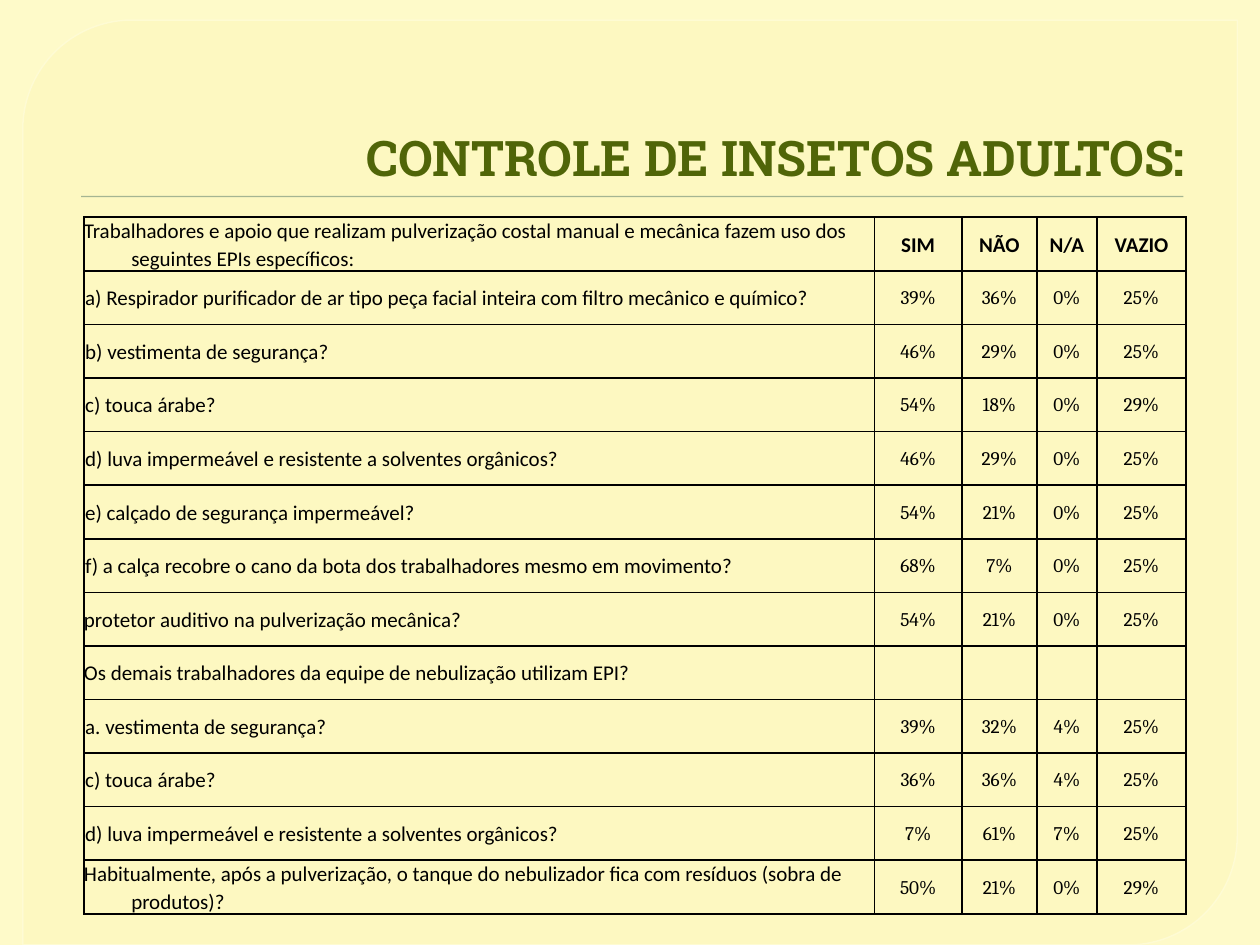
from dataclasses import dataclass

from lxml.etree import SubElement
from pptx import Presentation
from pptx.dml.color import RGBColor as RGB
from pptx.enum.shapes import MSO_SHAPE as Shape
from pptx.enum.text import MSO_ANCHOR as Anchor, PP_ALIGN as Align
from pptx.oxml.ns import qn
from pptx.util import Pt


@dataclass(frozen=True)
class Theme:
    background: str = "FEFAC9"
    panel: str = "FDF8BE"
    panel_line: str = "FFFCD6"
    rule: str = "A5B592"
    title: str = "506508"
    ink: str = "000000"
    title_font: str = "Roboto Slab"
    label_font: str = "Calibri"
    value_font: str = "Cambria"
    title_size: float = 28
    label_size: float = 12
    value_size: float = 11


THEME = Theme()
TITLE = "CONTROLE DE INSETOS ADULTOS:"
COLUMNS = [451.6, 50.2, 42.7, 34.4, 50.9]
ROW_HEIGHT = 30.63
WIDE, NARROW, CENTERED = (27, -27), (18.7, -18), (18, -18)
HEADER = ["SIM", "NÃO", "N/A", "VAZIO"]
ROWS = [
    ("Trabalhadores e apoio que realizam pulverização costal manual e mecânica "
     "fazem uso dos seguintes EPIs específicos:", WIDE, HEADER),
    ("a) Respirador purificador de ar tipo peça facial inteira com filtro "
     "mecânico e químico?", NARROW, [39, 36, 0, 25]),
    ("b) vestimenta de segurança?", NARROW, [46, 29, 0, 25]),
    ("c) touca árabe?", NARROW, [54, 18, 0, 29]),
    ("d) luva impermeável e resistente a solventes orgânicos?", NARROW, [46, 29, 0, 25]),
    ("e) calçado de segurança impermeável?", NARROW, [54, 21, 0, 25]),
    ("f) a calça recobre o cano da bota dos trabalhadores mesmo em movimento?",
     NARROW, [68, 7, 0, 25]),
    ("protetor auditivo na pulverização mecânica?", WIDE, [54, 21, 0, 25]),
    ("Os demais trabalhadores da equipe de nebulização utilizam EPI?", WIDE, []),
    ("a. vestimenta de segurança?", NARROW, [39, 32, 4, 25]),
    ("c) touca árabe?", NARROW, [36, 36, 4, 25]),
    ("d) luva impermeável e resistente a solventes orgânicos?", NARROW, [7, 61, 7, 25]),
    ("Habitualmente, após a pulverização, o tanque do nebulizador fica com "
     "resíduos (sobra de produtos)?", WIDE, [50, 21, 0, 29]),
]


def paint(fill, color, opacity=100):
    fill.solid()
    fill.fore_color.rgb = RGB.from_string(color)
    if opacity < 100:
        for clr in fill._xPr.iter(qn("a:srgbClr")):
            SubElement(clr, qn("a:alpha"), val=str(opacity * 1000))


def add_box(s, kind, left, top, width, height, color, opacity=100):
    sp = s.shapes.add_shape(kind, Pt(left), Pt(top), Pt(width), Pt(height))
    sp.shadow.inherit = False
    paint(sp.fill, color, opacity)
    sp.line.fill.background()
    return sp


def write(p, text, font, size, color, bold=False, align=Align.LEFT, indent=(0, 0)):
    p.text = text
    p.alignment = align
    p.font.name, p.font.size, p.font.bold = font, Pt(size), bold
    p.font.color.rgb = RGB.from_string(color)
    margin, first = indent
    pPr = p._p.get_or_add_pPr()
    pPr.set("marL", str(Pt(margin)))
    pPr.set("indent", str(Pt(first)))


def add_panel(s):
    panel = add_box(s, Shape.ROUND_2_DIAG_RECTANGLE, 13, 11.5, 694, 528.5, THEME.panel, 65)
    panel.adjustments[0], panel.adjustments[1] = 0.118, 0
    paint(panel.line.fill, THEME.panel_line, 88)
    panel.line.width = Pt(0.87)


def add_title(s):
    tf = s.shapes.add_textbox(Pt(36), Pt(20), Pt(648), Pt(90)).text_frame
    tf.word_wrap = True
    tf.vertical_anchor = Anchor.BOTTOM
    write(tf.paragraphs[0], TITLE, THEME.title_font, THEME.title_size, THEME.title,
          True, Align.RIGHT, (4.3, 0))


def add_borders(cell):
    tcPr = cell._tc.get_or_add_tcPr()
    for i, side in enumerate(("lnL", "lnR", "lnT", "lnB")):
        ln = tcPr.makeelement(qn(f"a:{side}"), {"w": str(Pt(1))})
        solid = SubElement(ln, qn("a:solidFill"))
        SubElement(solid, qn("a:srgbClr"), val=THEME.ink)
        tcPr.insert(i, ln)


def format_cell(cell):
    cell.margin_left = cell.margin_right = cell.margin_top = cell.margin_bottom = 0
    cell.vertical_anchor = Anchor.MIDDLE
    cell.fill.background()
    add_borders(cell)


def fill_row(cells, label, indent, values):
    p = cells[0].text_frame.paragraphs[0]
    write(p, label, THEME.label_font, THEME.label_size, THEME.ink, indent=indent)
    p.line_spacing, p.space_before = 1.07, Pt(0.7)
    for cell, value in zip(cells[1:], values):
        p = cell.text_frame.paragraphs[0]
        if values is HEADER:
            write(p, value, THEME.label_font, THEME.label_size, THEME.ink,
                  True, Align.CENTER, CENTERED)
        else:
            write(p, f"{value}%", THEME.value_font, THEME.value_size, THEME.ink,
                  False, Align.CENTER, CENTERED)
        p.line_spacing = 1.07


def add_answers(s):
    table = s.shapes.add_table(len(ROWS), len(COLUMNS), Pt(48), Pt(124),
                               Pt(sum(COLUMNS)), Pt(ROW_HEIGHT * len(ROWS))).table
    table.first_row = table.horz_banding = False
    for column, width in zip(table.columns, COLUMNS):
        column.width = Pt(width)
    for row, content in zip(table.rows, ROWS):
        row.height = Pt(ROW_HEIGHT)
        cells = list(row.cells)
        for cell in cells:
            format_cell(cell)
        fill_row(cells, *content)


def main():
    prs = Presentation()
    prs.slide_width, prs.slide_height = Pt(720), Pt(540)
    s = prs.slides.add_slide(prs.slide_layouts[6])
    paint(s.background.fill, THEME.background)
    add_panel(s)
    add_box(s, Shape.RECTANGLE, 46.3, 112, 630, 0.72, THEME.rule)
    add_title(s)
    add_answers(s)
    prs.save("out.pptx")


if __name__ == "__main__":
    main()
